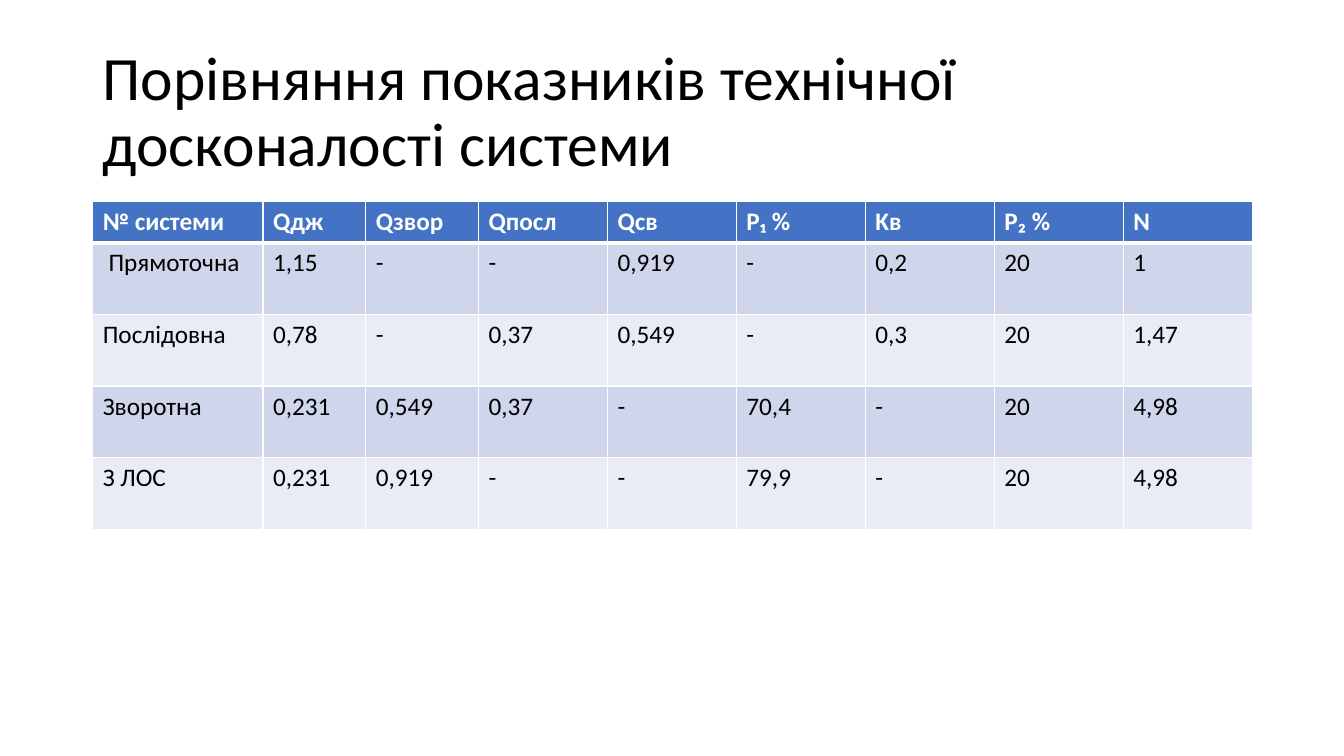
from lxml import etree
from pptx import Presentation
from pptx.dml.color import RGBColor
from pptx.enum.text import MSO_ANCHOR
from pptx.oxml.ns import qn
from pptx.util import Inches, Pt

MIDDLE = MSO_ANCHOR.MIDDLE
FONT = "Calibri"
COLORS = {
    "text": "000000",
    "header_text": "FFFFFF",
    "border": "FFFFFF",
    "header": "4472C4",
    "odd_row": "CFD5EA",
    "even_row": "E9EBF5",
}
TITLE = "Порівняння показників технічної досконалості системи"
HEADINGS = ["№ системи", "Qдж", "Qзвор", "Qпосл", "Qсв", "P₁ %", "Kв", "P₂ %", "N"]
SYSTEMS = [
    [" Прямоточна", "1,15", "-", "-", "0,919", "-", "0,2", "20", "1"],
    ["Послідовна", "0,78", "-", "0,37", "0,549", "-", "0,3", "20", "1,47"],
    ["Зворотна", "0,231", "0,549", "0,37", "-", "70,4", "-", "20", "4,98"],
    ["З ЛОС", "0,231", "0,919", "-", "-", "79,9", "-", "20", "4,98"],
]
COLUMN_WIDTHS = [1.69, 1.02, 1.12] + [1.28] * 6
HEADER_HEIGHT = 0.41
ROW_HEIGHT = 0.71


def write_text(frame, text, size=18, color="text", bold=False, spacing=1.0):
    para = frame.paragraphs[0]
    para.line_spacing = spacing
    span = para.add_run()
    span.text = text
    span.font.name = FONT
    span.font.size = Pt(size)
    span.font.bold = bold
    span.font.color.rgb = RGBColor.from_string(COLORS[color])


def set_borders(cell, top, bottom):
    properties = cell._tc.get_or_add_tcPr()
    for side, width in (("L", 1), ("R", 1), ("T", top), ("B", bottom)):
        line = etree.SubElement(properties, qn(f"a:ln{side}"), w=str(Pt(width)))
        fill = etree.SubElement(line, qn("a:solidFill"))
        etree.SubElement(fill, qn("a:srgbClr"), val=COLORS["border"])


def add_title(page, left, top, width, height):
    box = page.shapes.add_textbox(Inches(left), Inches(top), Inches(width), Inches(height))
    frame = box.text_frame
    frame.word_wrap = True
    frame.vertical_anchor = MIDDLE
    write_text(frame, TITLE, size=44, spacing=0.9)


def add_comparison(page, left, top, width):
    rows = [HEADINGS] + SYSTEMS
    heights = [HEADER_HEIGHT] + [ROW_HEIGHT] * len(SYSTEMS)
    table = page.shapes.add_table(
        len(rows), len(HEADINGS), Inches(left), Inches(top), Inches(width), Inches(sum(heights))
    ).table
    scale = width / sum(COLUMN_WIDTHS)
    for column, column_width in zip(table.columns, COLUMN_WIDTHS):
        column.width = Inches(column_width * scale)
    for index, (values, height) in enumerate(zip(rows, heights)):
        table.rows[index].height = Inches(height)
        is_header = index == 0
        row_fill = "header" if is_header else ("odd_row" if index % 2 else "even_row")
        for cell, value in zip(table.rows[index].cells, values):
            set_borders(cell, top=3 if index == 1 else 1, bottom=3 if is_header else 1)
            cell.fill.solid()
            cell.fill.fore_color.rgb = RGBColor.from_string(COLORS[row_fill])
            write_text(
                cell.text_frame, value, color="header_text" if is_header else "text", bold=is_header
            )


def main():
    deck = Presentation()
    deck.slide_width = Inches(13.33)
    deck.slide_height = Inches(7.5)
    page = deck.slides.add_slide(deck.slide_layouts[6])
    add_title(page, 0.92, 0.4, 11.5, 1.45)
    add_comparison(page, 0.92, 2, 11.5)
    deck.save("out.pptx")


if __name__ == "__main__":
    main()
